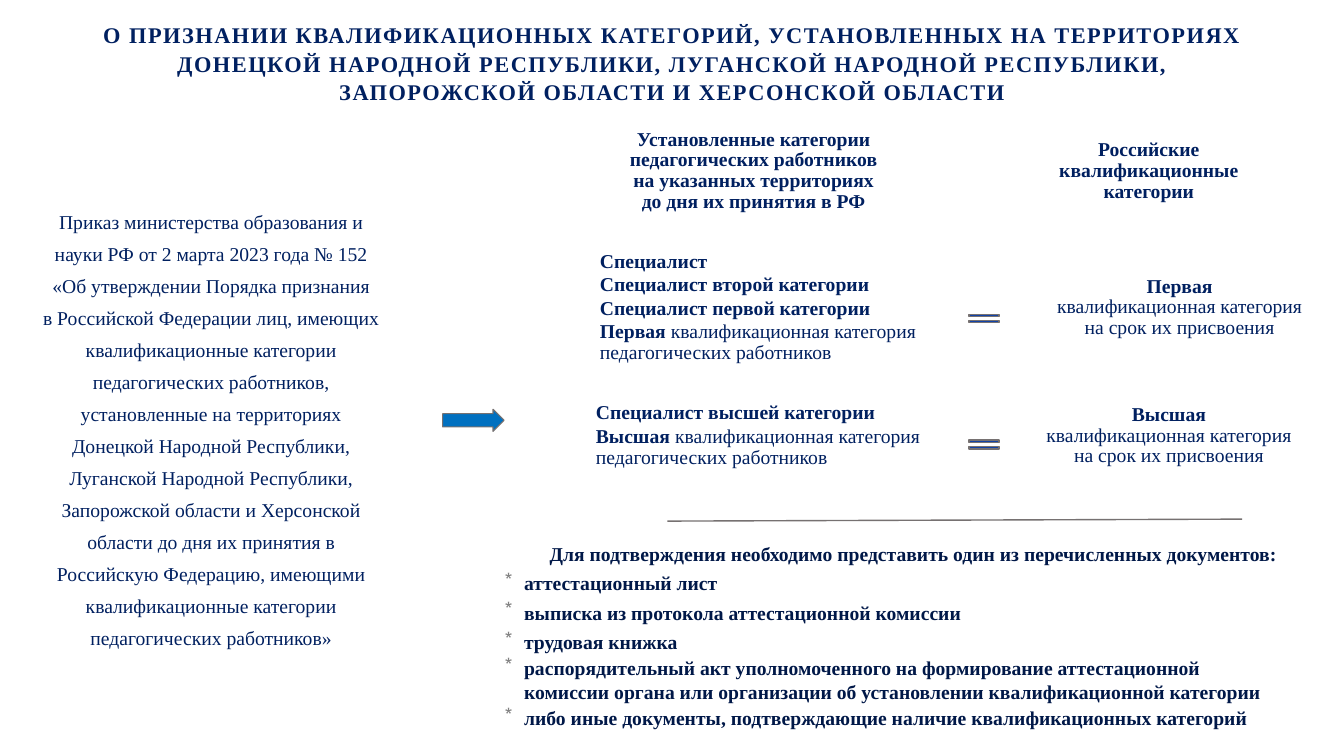
from dataclasses import dataclass

from lxml.etree import SubElement
from pptx import Presentation
from pptx.dml.color import RGBColor
from pptx.enum.shapes import MSO_CONNECTOR as Conn, MSO_SHAPE as Kind
from pptx.enum.text import MSO_ANCHOR as Anchor, MSO_AUTO_SIZE as Fit, PP_ALIGN as Align
from pptx.oxml.ns import qn
from pptx.util import Pt

PX = 9144  # 100 px to the inch
FONT = "Times New Roman"
HUE = {"navy": "002060", "ink": "001848", "white": "FFFFFF", "blue": "0070C0",
       "equal": "1143A7", "line": "767171", "star": "808080"}


@dataclass
class Para:
    text: str
    lead: str = ""  # bold words before the text
    bold: bool = False
    size: int = 14
    hue: str = "navy"
    mid: bool = True
    space: float | None = None
    before: int = 0
    after: int = 0
    track: int = 0
    star: bool = False


@dataclass
class Form:
    kind: Kind
    box: tuple[int, int, int, int]
    adj: tuple[float, ...]
    fill: str
    line: str
    width: float = 1


@dataclass
class Grid:
    box: tuple[int, int, int, int]
    cols: list[int]
    cells: list[list[Para]]
    fill: str | None = "white"
    pad: int = 13  # left margin of the last cell


def px(*nums: int) -> list[int]:
    return [n * PX for n in nums]


def rgb(name: str) -> RGBColor:
    return RGBColor.from_string(HUE[name])


def add_star(para) -> None:
    props = para._p.get_or_add_pPr()
    props.set("marL", str(19 * PX))
    props.set("indent", str(-19 * PX))
    color = SubElement(props, qn("a:buClr"))
    SubElement(color, qn("a:srgbClr")).set("val", HUE["star"])
    mark = SubElement(props, qn("a:buChar"))
    mark.set("char", "*")
    base = props.find(qn("a:defRPr"))
    base.addprevious(color)
    base.addprevious(mark)


def write(frame, items: list[Para]) -> None:
    for num, item in enumerate(items):
        para = frame.add_paragraph() if num else frame.paragraphs[0]
        para.alignment = Align.CENTER if item.mid else Align.LEFT
        para.space_before, para.space_after = Pt(item.before), Pt(item.after)
        if item.space:
            para.line_spacing = item.space
        font = para.font
        font.name, font.size, font.bold = FONT, Pt(item.size), item.bold
        font.color.rgb = rgb(item.hue)
        if item.lead:
            for words, bold in ((item.lead, True), (item.text, False)):
                run = para.add_run()
                run.text, run.font.bold = words, bold
        else:
            para.text = item.text
        if item.track:
            for run in para.runs:
                run._r.get_or_add_rPr().set("spc", str(item.track))
        if item.star:
            add_star(para)


def inset(part, left: int, top: int, right: int, base: int) -> None:
    part.margin_left, part.margin_top, part.margin_right, part.margin_bottom = px(
        left, top, right, base)


def add_form(slide, form: Form) -> None:
    shape = slide.shapes.add_shape(form.kind, *px(*form.box))
    for num, value in enumerate(form.adj):
        shape.adjustments[num] = value
    shape.shadow.inherit = False
    shape.fill.solid()
    shape.fill.fore_color.rgb = rgb(form.fill)
    shape.line.color.rgb = rgb(form.line)
    shape.line.width = Pt(form.width)


def add_grid(slide, grid: Grid) -> None:
    table = slide.shapes.add_table(1, len(grid.cols), *px(*grid.box)).table
    table.first_row = table.horz_banding = False
    for num, (wide, items) in enumerate(zip(grid.cols, grid.cells)):
        table.columns[num].width = wide * PX
        cell = table.cell(0, num)
        cell.vertical_anchor = Anchor.MIDDLE
        inset(cell, grid.pad if num == len(grid.cols) - 1 else 13, 7, 13, 7)
        if grid.fill:
            cell.fill.solid()
            cell.fill.fore_color.rgb = rgb(grid.fill)
        else:
            cell.fill.background()
        write(cell.text_frame, items)


def add_text(slide, box: tuple[int, int, int, int], items: list[Para]):
    frame = slide.shapes.add_textbox(*px(*box)).text_frame
    frame.word_wrap = True
    write(frame, items)
    return frame


def head(text: str) -> Para:
    return Para(text, bold=True, space=0.96)


def grade(text: str, lead: str = "", gap: int = 2) -> Para:
    return Para(text, lead, bold=not lead, mid=False, space=0.96, before=gap)


def rank(name: str) -> list[Para]:
    return [head(name), Para("квалификационная категория", space=0.96),
            Para("на срок их присвоения", space=0.96)]


def proof(text: str, before: int = 2, after: int = 2, star: bool = True) -> Para:
    return Para(text, bold=True, hue="ink", mid=not star, before=before,
                after=after, star=star)


TITLE = ["О ПРИЗНАНИИ КВАЛИФИКАЦИОННЫХ КАТЕГОРИЙ, УСТАНОВЛЕННЫХ НА ТЕРРИТОРИЯХ",
         "ДОНЕЦКОЙ НАРОДНОЙ РЕСПУБЛИКИ, ЛУГАНСКОЙ НАРОДНОЙ РЕСПУБЛИКИ,",
         "ЗАПОРОЖСКОЙ ОБЛАСТИ И ХЕРСОНСКОЙ ОБЛАСТИ"]
ORDER = ["Приказ министерства образования и науки РФ от 2 марта 2023 года № 152",
         "«Об утверждении Порядка признания",
         "в Российской Федерации лиц, имеющих квалификационные категории "
         "педагогических работников, установленные на территориях Донецкой Народной "
         "Республики, Луганской Народной Республики, Запорожской области и Херсонской "
         "области до дня их принятия в Российскую Федерацию, имеющими "
         "квалификационные категории педагогических работников»"]
REST = " квалификационная категория педагогических работников"
FORMS = [Form(Kind.ROUNDED_RECTANGLE, (22, 106, 375, 632), (0.1,), "white", "white"),
         Form(Kind.RIGHT_ARROW, (439, 406, 61, 22), (0.6, 0.5), "blue", "line", 0.75),
         Form(Kind.ROUNDED_RECTANGLE, (570, 179, 741, 488), (0.1,), "white", "white")]
GRIDS = [
    Grid((558, 118, 745, 100), [379, 366],
         [[head("Установленные категории педагогических работников"),
           head("на указанных территориях"), head("до дня их принятия в РФ")],
          [head("Российские"), head("квалификационные"), head("категории")]],
         fill=None, pad=52),
    Grid((582, 238, 730, 130), [342, 104, 284],
         [[grade("Специалист", gap=0), grade("Специалист второй категории"),
           grade("Специалист первой категории"), grade(REST, "Первая")],
          [], rank("Первая")]),
    Grid((578, 368, 730, 129), [384, 49, 297],
         [[grade("Специалист высшей категории", gap=0), grade(REST, "Высшая")],
          [], rank("Высшая")])]
PROOFS = [
    proof("Для подтверждения необходимо представить один из перечисленных документов:",
          star=False),
    proof("аттестационный лист"),
    proof("выписка из протокола аттестационной комиссии"),
    proof("трудовая книжка"),
    proof("распорядительный акт уполномоченного на формирование аттестационной\v"
          "комиссии органа или организации об установлении квалификационной категории",
          0, 0),
    proof("либо иные документы, подтверждающие наличие квалификационных категорий", 2, 0)]


def main() -> None:
    deck = Presentation()
    deck.slide_width, deck.slide_height = px(1333, 750)
    slide = deck.slides.add_slide(deck.slide_layouts[5])

    # Title
    title = slide.shapes.title
    title.left, title.top, title.width, title.height = px(0, 0, 1334, 124)
    frame = title.text_frame
    frame.auto_size, frame.word_wrap = Fit.NONE, True
    frame.vertical_anchor = Anchor.MIDDLE
    inset(frame, 13, 7, 13, 7)
    write(frame, [Para(t, bold=True, size=16, space=1.05, track=110) for t in TITLE])

    # Panels, arrow and the order
    for form in FORMS:
        add_form(slide, form)
    order = add_text(slide, (33, 117, 353, 610), [Para(t, space=1.36) for t in ORDER])
    order.vertical_anchor = Anchor.MIDDLE
    inset(order, 6, 6, 6, 6)

    # Categories and equal signs
    for grid in GRIDS:
        add_grid(slide, grid)
    for top, high in ((301, 30), (425, 32)):
        add_form(slide, Form(Kind.MATH_EQUAL, (956, top, 40, high), (0.081, 0.118),
                             "equal", "line"))

    # Proof documents under a rule
    add_text(slide, (491, 533, 830, 197), PROOFS)
    rule = slide.shapes.add_connector(Conn.STRAIGHT, *px(662, 517, 1232, 515))
    rule.line.color.rgb = rgb("line")
    rule.line.width = Pt(1)
    SubElement(rule._element.spPr, qn("a:effectLst"))

    deck.save("out.pptx")


if __name__ == "__main__":
    main()
